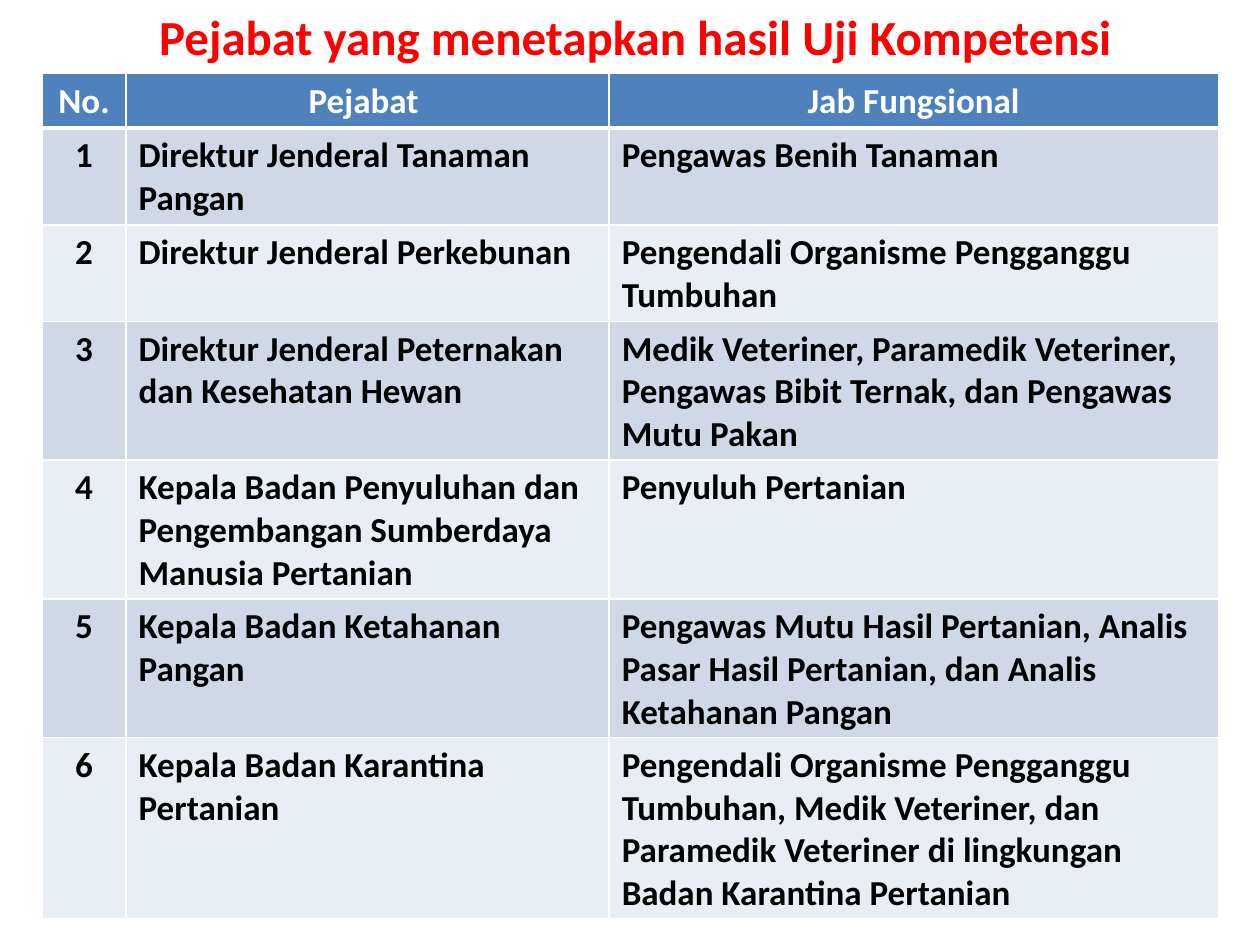
from lxml import etree
from pptx import Presentation
from pptx import util as u
from pptx.dml.color import RGBColor
from pptx.enum import text
from pptx.oxml import ns

COLORS = {"title": "FF0000", "header": "4F81BD", "odd": "D0D8E8",
          "even": "E9EDF4", "white": "FFFFFF", "black": "000000"}
HEADERS = ("No.", "Pejabat ", "Jab Fungsional")
OFFICIALS = (
    ("Direktur Jenderal Tanaman Pangan", "Pengawas Benih Tanaman"),
    ("Direktur Jenderal Perkebunan", "Pengendali Organisme Pengganggu Tumbuhan"),
    ("Direktur Jenderal Peternakan dan Kesehatan Hewan",
     "Medik Veteriner, Paramedik Veteriner, Pengawas Bibit Ternak, dan Pengawas Mutu Pakan"),
    ("Kepala Badan Penyuluhan dan Pengembangan Sumberdaya Manusia Pertanian",
     "Penyuluh Pertanian"),
    ("Kepala Badan Ketahanan Pangan",
     "Pengawas Mutu Hasil Pertanian, Analis Pasar Hasil Pertanian, dan Analis Ketahanan Pangan"),
    ("Kepala Badan Karantina Pertanian",
     "Pengendali Organisme Pengganggu Tumbuhan, Medik Veteriner, dan Paramedik Veteriner "
     "di lingkungan Badan Karantina Pertanian"),
)
COLUMN_WIDTHS = (1.69, 9.74, 12.28)
ROW_HEIGHT = 1.03


def write(tf, content, size=20, color="black", centered=False):
    """Fill a text frame with one bold Calibri paragraph."""
    p = tf.paragraphs[0]
    p.alignment = text.PP_ALIGN.CENTER if centered else text.PP_ALIGN.LEFT
    r = p.add_run()
    r.text = content
    r.font.name = "Calibri"
    r.font.size = u.Pt(size)
    r.font.bold = True
    r.font.color.rgb = RGBColor.from_string(COLORS[color])


def add_borders(cell, **widths):
    """Draw white borders, 1 pt unless a side is given its own width."""
    tcPr = cell._tc.get_or_add_tcPr()
    for side in ("L", "R", "T", "B"):
        ln = etree.SubElement(tcPr, ns.qn(f"a:ln{side}"), w=str(u.Pt(widths.get(side, 1))))
        fill = etree.SubElement(ln, ns.qn("a:solidFill"))
        etree.SubElement(fill, ns.qn("a:srgbClr"), val=COLORS["white"])


def add_title(s, content):
    """Add the centred red title."""
    sp = s.shapes.add_textbox(u.Cm(1.06), u.Cm(0), u.Cm(23.71), u.Cm(1.45))
    tf = sp.text_frame
    tf.word_wrap = True
    tf.auto_size = text.MSO_AUTO_SIZE.SHAPE_TO_FIT_TEXT
    write(tf, content, size=28, color="title", centered=True)


def add_officials_table(s, rows):
    """Add the banded table with a header row."""
    frame = s.shapes.add_table(len(rows), len(COLUMN_WIDTHS), u.Cm(0.85), u.Cm(1.48),
                               u.Cm(sum(COLUMN_WIDTHS)), u.Cm(ROW_HEIGHT * len(rows)))
    table = frame.table
    for column, width in zip(table.columns, COLUMN_WIDTHS):
        column.width = u.Cm(width)
    for i, row in enumerate(rows):
        band = "header" if i == 0 else ("even", "odd")[i % 2]
        rule = {0: {"B": 3}, 1: {"T": 3}}.get(i, {})
        for j, content in enumerate(row):
            cell = table.cell(i, j)
            add_borders(cell, **rule)
            cell.fill.solid()
            cell.fill.fore_color.rgb = RGBColor.from_string(COLORS[band])
            write(cell.text_frame, content, color="black" if i else "white",
                  centered=i == 0 or j == 0)


def main():
    """Build and save the slide."""
    prs = Presentation()
    prs.slide_width, prs.slide_height = u.Cm(25.4), u.Cm(19.05)
    s = prs.slides.add_slide(prs.slide_layouts[6])
    add_title(s, "Pejabat yang menetapkan hasil Uji Kompetensi ")
    numbered = [(str(n), *official) for n, official in enumerate(OFFICIALS, 1)]
    add_officials_table(s, [HEADERS, *numbered])
    prs.save("out.pptx")


if __name__ == "__main__":
    main()
